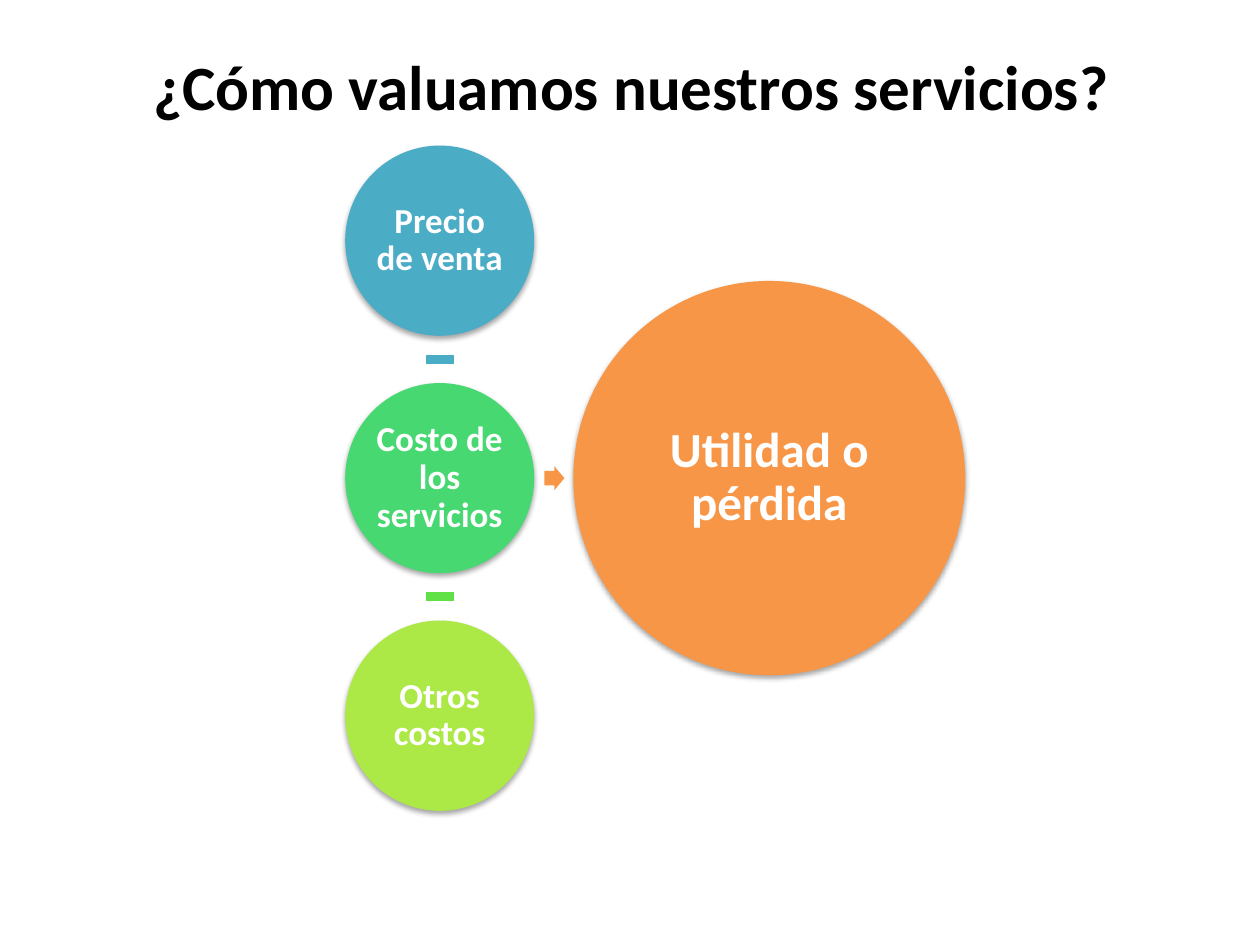
from dataclasses import dataclass
from typing import Optional

from lxml.etree import SubElement
from pptx import Presentation
from pptx.dml.color import RGBColor
from pptx.enum.shapes import MSO_SHAPE as Preset
from pptx.enum.text import MSO_ANCHOR as Anchor, PP_ALIGN as Align
from pptx.oxml.ns import qn
from pptx.util import Inches, Pt

COLUMNS, ROWS = 100, 75
MIDDLE_ROW = 37.95
FACTOR_COLUMN = 34.9
FACTOR_PITCH = 18.85


@dataclass(frozen=True)
class Theme:
    font: str = "Calibri"
    title_size: int = 36
    factor_size: int = 20
    result_size: int = 28
    black: str = "000000"
    white: str = "FFFFFF"
    blue: str = "4BACC6"
    green: str = "47D872"
    bright_green: str = "60E146"
    lime: str = "ACE946"
    orange: str = "F79646"


@dataclass(frozen=True)
class Area:
    column: float
    row: float
    columns: float
    rows: float


@dataclass(frozen=True)
class Element:
    preset: Preset
    area: Area
    color: str
    text: Optional[str] = None
    size: int = 0
    inset: float = 0


THEME = Theme()


def apply_format(target, values: dict) -> None:
    for name, value in values.items():
        setattr(target, name, value)


def place(shape, area: Area, presentation) -> None:
    column, row = presentation.slide_width / COLUMNS, presentation.slide_height / ROWS
    apply_format(shape, {
        "left": round((area.column - area.columns / 2) * column),
        "top": round((area.row - area.rows / 2) * row),
        "width": round(area.columns * column),
        "height": round(area.rows * row),
    })


def write(shape, text: str, size: int, color: str, spacing: float, frame_format: dict) -> None:
    frame = shape.text_frame
    frame.text = text
    apply_format(frame, {"word_wrap": True, "vertical_anchor": Anchor.MIDDLE, **frame_format})
    paragraph = frame.paragraphs[0]
    apply_format(paragraph, {"alignment": Align.CENTER, "line_spacing": spacing})
    font = paragraph.runs[0].font
    apply_format(font, {"name": THEME.font, "size": Pt(size), "bold": True})
    font.color.rgb = RGBColor.from_string(color)


def add_soft_shadow(shape) -> None:
    effects = shape._element.spPr.find(qn("a:effectLst"))
    shadow = SubElement(effects, qn("a:outerShdw"), blurRad=str(Pt(3.1)),
                        dist=str(Pt(1.8)), dir="5400000", rotWithShape="0")
    color = SubElement(shadow, qn("a:srgbClr"), val=THEME.black)
    SubElement(color, qn("a:alpha"), val="35000")


def draw(element: Element, slide, presentation) -> None:
    shape = slide.shapes.add_shape(element.preset, 0, 0, 0, 0)
    place(shape, element.area, presentation)
    shape.shadow.inherit = False
    shape.fill.solid()
    shape.fill.fore_color.rgb = RGBColor.from_string(element.color)
    shape.line.fill.background()
    if element.preset == Preset.RIGHT_ARROW:
        shape.adjustments[0] = 0.6
    if element.text:
        add_soft_shadow(shape)
        sides = ("left", "top", "right", "bottom")
        margins = {f"margin_{side}": Inches(element.inset) for side in sides}
        write(shape, element.text, element.size, THEME.white, 0.9, margins)


def factor_elements() -> list[Element]:
    factors = (("Precio de venta", THEME.blue), ("Costo de los servicios", THEME.green),
               ("Otros costos", THEME.lime))
    circles = [
        Element(Preset.OVAL, Area(FACTOR_COLUMN, MIDDLE_ROW + (index - 1) * FACTOR_PITCH, 15, 15.1),
                color, text, THEME.factor_size, 0.03)
        for index, (text, color) in enumerate(factors)
    ]
    signs = [
        Element(Preset.MATH_MINUS,
                Area(FACTOR_COLUMN, MIDDLE_ROW + (index - 0.5) * FACTOR_PITCH, 3, 3), color)
        for index, color in enumerate((THEME.blue, THEME.bright_green))
    ]
    return circles + signs


def main() -> None:
    presentation = Presentation()
    apply_format(presentation, {"slide_width": Inches(10), "slide_height": Inches(7.5)})
    slide = presentation.slides.add_slide(presentation.slide_layouts[5])
    title = slide.shapes.title
    place(title, Area(50.1, 6.8, 100, 14.2), presentation)
    write(title, "¿Cómo valuamos nuestros servicios?", THEME.title_size, THEME.black, 1.0, {})
    result_elements = [
        Element(Preset.RIGHT_ARROW, Area(44, MIDDLE_ROW, 1.6, 1.9), THEME.orange),
        Element(Preset.OVAL, Area(61.05, MIDDLE_ROW, 31.1, 31.3), THEME.orange,
                "Utilidad o pérdida", THEME.result_size, 0.04),
    ]
    for element in factor_elements() + result_elements:
        draw(element, slide, presentation)
    presentation.save("out.pptx")


if __name__ == "__main__":
    main()
